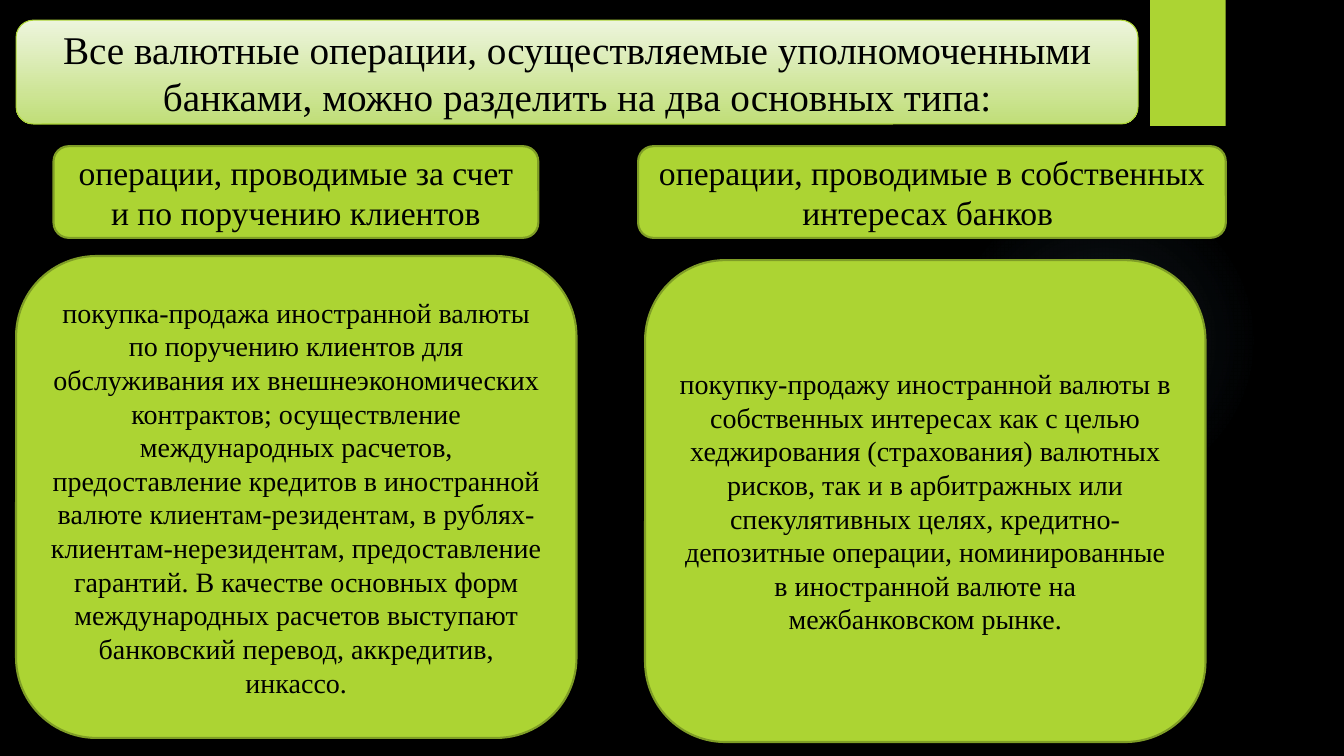
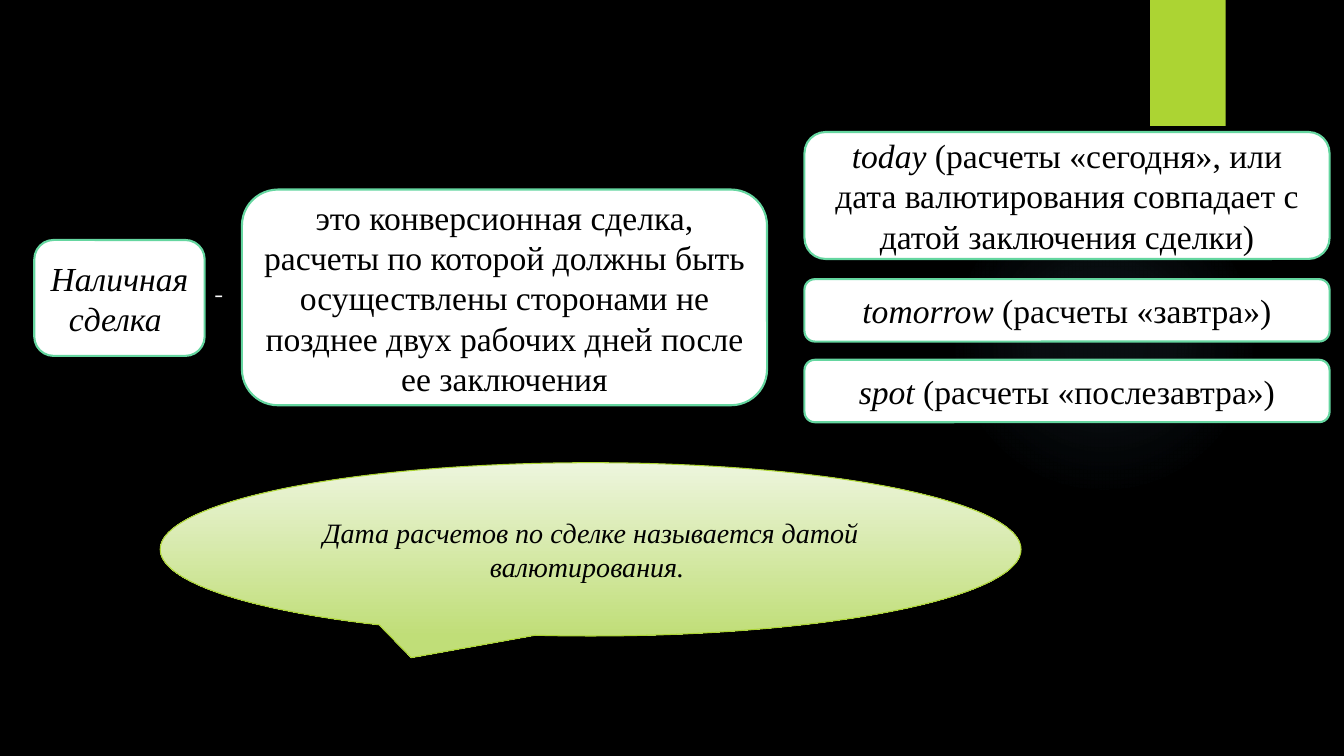
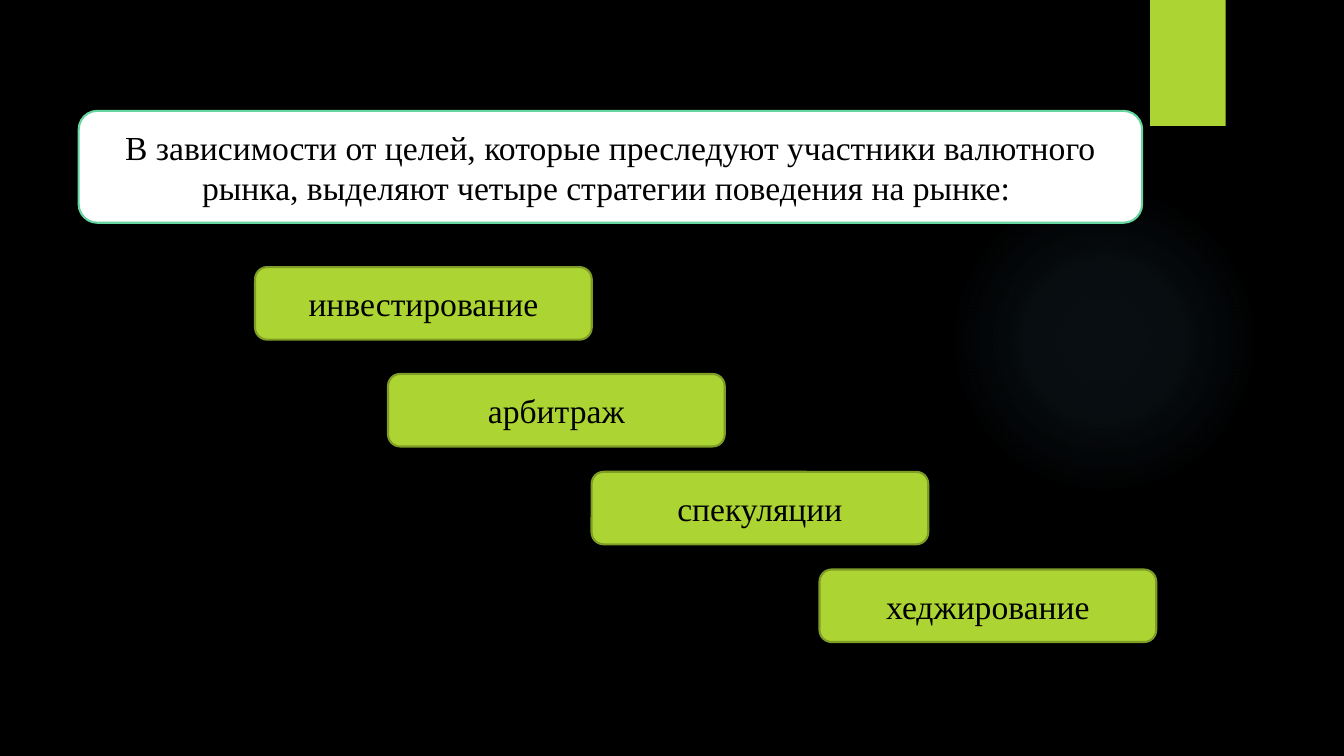
import pptx
import pptx.util
import pptx.dml.color
import pptx.enum.shapes
import pptx.enum.text
import pptx.oxml

Pt = pptx.util.Pt
rgb = pptx.dml.color.RGBColor.from_string
SHAPE = pptx.enum.shapes.MSO_SHAPE
ALIGN = pptx.enum.text.PP_ALIGN
ANCHOR = pptx.enum.text.MSO_ANCHOR

LIME = "ACD433"
GREEN_STYLE = ([LIME], "7F9D26", 1.5)
WHITE_STYLE = (["FFFFFF"], "65D6A0", 1.5)
PALE_STYLE = (["EDF5DD", "C0DE78"], LIME, 0.75)
GLOW_STOPS = [(0, 7), (36, 6), (69, 0)]

prs = pptx.Presentation()
prs.slide_width = Pt(960)
prs.slide_height = Pt(540)
background = prs.slide_master.background.fill
background.solid()
background.fore_color.rgb = rgb("000000")


def start_slide():
    slide = prs.slides.add_slide(prs.slide_layouts[6])
    glow = slide.shapes.add_shape(SHAPE.OVAL, Pt(677.5), Pt(131.8), Pt(221.8), Pt(221.8))
    tab = slide.shapes.add_shape(SHAPE.RECTANGLE, Pt(821.5), Pt(0), Pt(54), Pt(90))
    for decoration in (glow, tab):
        decoration.shadow.inherit = False
        decoration.line.fill.background()
    tab.fill.solid()
    tab.fill.fore_color.rgb = rgb(LIME)
    glow.fill.gradient()
    stops = "".join(
        f'<a:gs pos="{pos * 1000}"><a:srgbClr val="7AC4F0"><a:alpha val="{alpha * 1000}"/></a:srgbClr></a:gs>'
        for pos, alpha in GLOW_STOPS
    )
    radial = pptx.oxml.parse_xml(
        '<a:gradFill xmlns:a="http://schemas.openxmlformats.org/drawingml/2006/main">'
        f'<a:gsLst>{stops}</a:gsLst><a:path path="circle">'
        '<a:fillToRect l="50000" t="50000" r="50000" b="50000"/></a:path></a:gradFill>'
    )
    linear = glow.element.spPr.find(pptx.oxml.ns.qn("a:gradFill"))
    glow.element.spPr.replace(linear, radial)
    return slide


def add_box(slide, place, style, runs, size=24, kind=SHAPE.ROUNDED_RECTANGLE):
    fills, outline, weight = style
    box = slide.shapes.add_shape(kind, *[Pt(length) for length in place])
    box.shadow.inherit = False
    if len(fills) == 1:
        box.fill.solid()
        box.fill.fore_color.rgb = rgb(fills[0])
    else:
        box.fill.gradient()
        box.fill.gradient_angle = 270
        for stop, color in zip(box.fill.gradient_stops, fills):
            stop.color.rgb = rgb(color)
    box.line.color.rgb = rgb(outline)
    box.line.width = Pt(weight)
    frame = box.text_frame
    frame.word_wrap = True
    frame.vertical_anchor = ANCHOR.MIDDLE
    paragraph = frame.paragraphs[0]
    paragraph.alignment = ALIGN.CENTER
    for text, italic in runs:
        run = paragraph.add_run()
        run.text = text
        run.font.name = "Times New Roman"
        run.font.size = Pt(size)
        run.font.italic = italic
        run.font.color.rgb = rgb("000000")


types_slide = start_slide()
add_box(types_slide, (11.5, 14.4, 801.4, 74.2), PALE_STYLE,
        [("Все валютные операции, осуществляемые уполномоченными банками, можно разделить на два основных типа:", False)], 28)
operation_types = [
    ((38.2, 104.4, 346.3, 65.5), "операции, проводимые за счет и по поручению клиентов",
     (11.5, 182.9, 400.3, 344.2),
     "покупка-продажа иностранной валюты по поручению клиентов для обслуживания их "
     "внешнеэкономических контрактов; осуществление международных расчетов, предоставление "
     "кредитов в иностранной валюте клиентам-резидентам, в рублях- клиентам-нерезидентам, "
     "предоставление гарантий. В качестве основных форм международных расчетов выступают "
     "банковский перевод, аккредитив, инкассо."),
    ((455.8, 104.4, 419.8, 65.5), "операции, проводимые в собственных интересах банков ",
     (460.8, 185.8, 400.3, 344.2),
     "покупку-продажу иностранной валюты в собственных интересах как с целью хеджирования "
     "(страхования) валютных рисков, так и в арбитражных или спекулятивных целях, "
     "кредитно-депозитные операции, номинированные в иностранной валюте на межбанковском рынке."),
]
for heading_place, heading, details_place, details in operation_types:
    add_box(types_slide, heading_place, GREEN_STYLE, [(heading, False)])
    add_box(types_slide, details_place, GREEN_STYLE, [(details, False)], 20)

deal_slide = start_slide()
add_box(deal_slide, (24.5, 171.4, 121.7, 82.8), WHITE_STYLE, [("Наличная сделка ", True)])
add_box(deal_slide, (172.8, 135.4, 375.1, 154.1), WHITE_STYLE,
        [("это конверсионная сделка, расчеты по которой должны быть осуществлены сторонами "
          "не позднее двух рабочих дней после ее заключения", False)])
dash = deal_slide.shapes.add_textbox(Pt(146.2), Pt(195.1), Pt(20.2), Pt(29.5))
dash.text_frame.word_wrap = True
dash_run = dash.text_frame.paragraphs[0].add_run()
dash_run.text = "-"
dash_run.font.name = "TeX Gyre Adventor"
dash_run.font.size = Pt(18)
dash_run.font.color.rgb = rgb("FFFFFF")
add_box(deal_slide, (114.5, 330.5, 614.9, 123.8), PALE_STYLE,
        [("Дата расчетов по сделке называется датой валютирования. ", True)], 20,
        SHAPE.OVAL_CALLOUT)
settlement_dates = [
    (94.3, 90.7, "today", " (расчеты «сегодня», или дата валютирования совпадает с датой заключения сделки)"),
    (199.4, 44.6, "tomorrow", " (расчеты «завтра»)"),
    (257, 44.6, "spot", " (расчеты «послезавтра»)"),
]
for top, height, term, meaning in settlement_dates:
    add_box(deal_slide, (574.6, top, 375.1, height), WHITE_STYLE, [(term, True), (meaning, False)])

strategy_slide = start_slide()
add_box(strategy_slide, (56.2, 79.2, 759.6, 79.9), WHITE_STYLE,
        [("В зависимости от целей, которые преследуют участники валютного рынка, выделяют "
          "четыре стратегии поведения на рынке: ", False)])
strategies = [
    (182.2, 190.8, "инвестирование"),
    (277.2, 267.1, "арбитраж"),
    (422.6, 337, "спекуляции"),
    (585.4, 406.8, "хеджирование"),
]
for left, top, strategy in strategies:
    add_box(strategy_slide, (left, top, 240.5, 51.8), GREEN_STYLE, [(strategy, False)])

prs.save("out.pptx")
